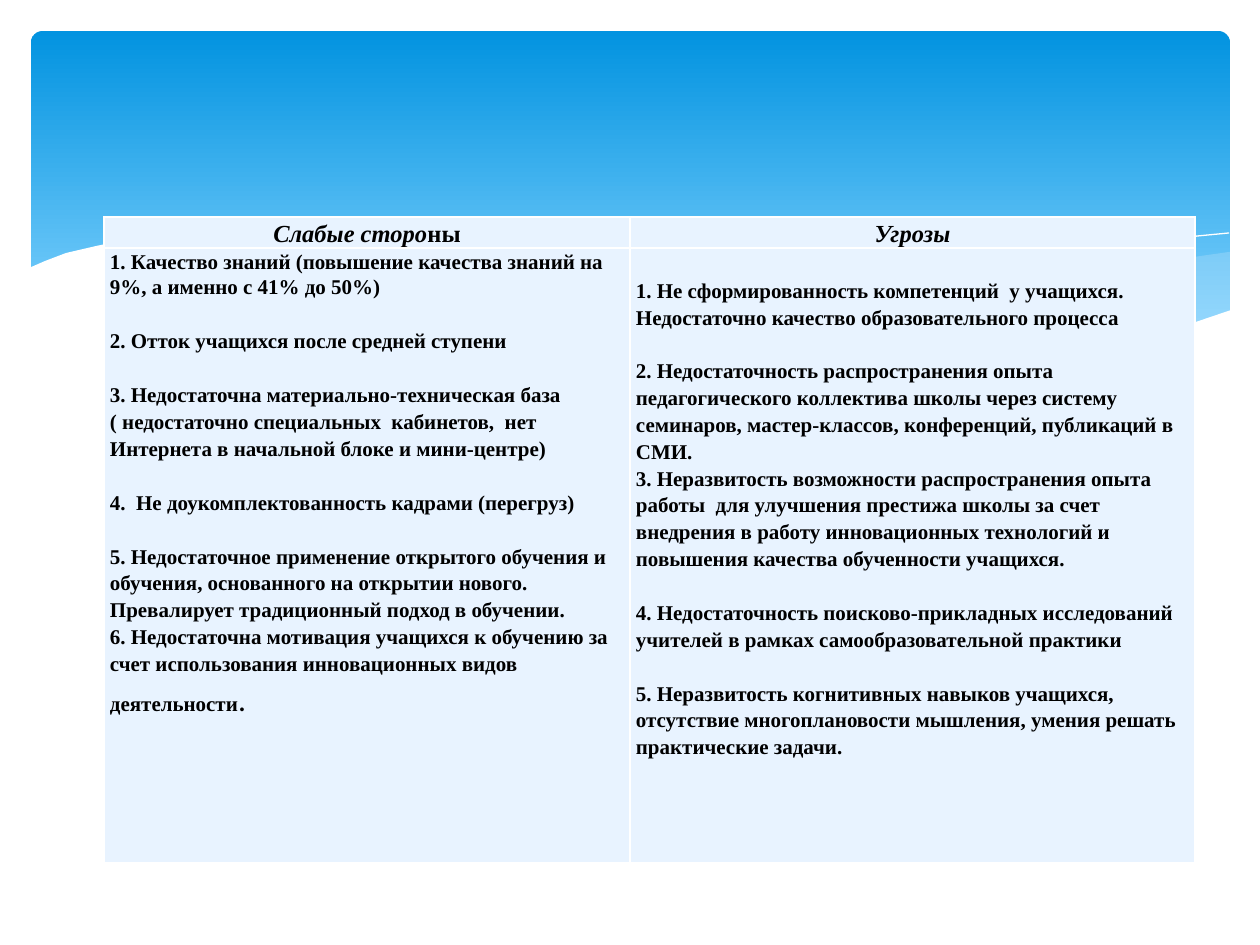
from lxml import etree
from pptx import Presentation
from pptx.dml.color import RGBColor
from pptx.enum.shapes import MSO_SHAPE
from pptx.enum.text import PP_ALIGN
from pptx.oxml import parse_xml
from pptx.oxml.ns import nsdecls, qn
from pptx.util import Emu, Pt

ROUND = MSO_SHAPE.ROUNDED_RECTANGLE
CENTER, LEFT = PP_ALIGN.CENTER, PP_ALIGN.LEFT
WHITE = RGBColor(0xFF, 0xFF, 0xFF)
BLACK = RGBColor(0, 0, 0)
BLUE = RGBColor(0x02, 0x93, 0xE0)
SKY = RGBColor(0x83, 0xD3, 0xFE)
MIST = RGBColor(0xC6, 0xE7, 0xFC)
PALE = RGBColor(0xE8, 0xF3, 0xFF)
SCALE = 914400 / 126
SERIF = "Times New Roman"


def px(num):
    return Emu(round(num * SCALE))


def style(item, form):
    for key, val in form.items():
        setattr(item, key, val)


deck = Presentation()
style(deck, {"slide_width": px(1260), "slide_height": px(945)})
slide = deck.slides.add_slide(deck.slide_layouts[6])
shapes = slide.shapes

band = shapes.add_shape(ROUND, px(31), px(31), px(1199), px(340))
band.adjustments[0] = 0.034
band.shadow.inherit = False
band.line.fill.background()
band.fill.gradient()
band.fill.gradient_angle = 270
for stop, tone, pos in zip(band.fill.gradient_stops, (BLUE, SKY), (0, 0.9)):
    style(stop, {"position": pos})
    stop.color.rgb = tone

waves = [
    (MIST, 29, [
        (1229, 252), (1194, 257), (1159, 265), (1123, 272), (1085, 281),
        (1014, 299), (949, 312), (890, 324), (833, 334), (871, 339),
        (922, 345), (969, 349), (1012, 350), (1052, 349), (1087, 347),
        (1120, 343), (1150, 338), (1178, 330), (1213, 318), (1230, 311),
        (1230, 252)]),
    (MIST, 40, [
        (1125, 344), (1091, 339), (1017, 328), (934, 311), (842, 291),
        (754, 270), (699, 258), (648, 249), (586, 241), (529, 236),
        (479, 233), (433, 234), (394, 237), (360, 241), (407, 247),
        (456, 256), (509, 266), (566, 280), (668, 302), (757, 321),
        (819, 333), (876, 340), (927, 347), (974, 349), (1017, 350),
        (1056, 350), (1092, 348)]),
    (None, 0, [
        (389, 246), (433, 239), (487, 236), (546, 236), (616, 239),
        (701, 248), (801, 262), (876, 276), (958, 294), (1047, 316),
        (1143, 343)]),
    (None, 0, [
        (772, 324), (823, 310), (876, 296), (942, 281), (1016, 265),
        (1091, 251), (1147, 242), (1198, 236), (1229, 233)]),
    (WHITE, 100, [
        (1231, 310), (1184, 326), (1133, 339), (1071, 347), (1019, 349),
        (959, 347), (892, 340), (816, 330), (730, 315), (634, 294),
        (563, 277), (493, 261), (428, 248), (368, 239), (315, 234),
        (266, 232), (223, 232), (184, 233), (150, 236), (120, 241),
        (96, 246), (66, 253), (45, 261), (29, 268), (29, 415), (1231, 415)]),
]
for tone, share, points in waves:
    pen = shapes.build_freeform(*points[0], scale=SCALE)
    pen.add_line_segments(points[1:], close=tone is not None)
    wave = pen.convert_to_shape()
    wave.shadow.inherit = False
    if tone is None:
        wave.fill.background()
        wave.line.color.rgb = WHITE
        wave.line.width = Pt(0)
        continue
    wave.line.fill.background()
    wave.fill.solid()
    wave.fill.fore_color.rgb = tone
    if share < 100:
        color = wave.fill._xPr.find(qn("a:solidFill"))[0]
        etree.SubElement(color, qn("a:alpha"), val=str(share * 1000))

HEAD = {"size": Pt(14), "name": SERIF, "bold": True, "italic": True}
PLAIN = {**HEAD, "italic": False}
BODY = {**PLAIN, "size": Pt(12)}
DOT = {"size": Pt(18), "name": "Calibri", "bold": False, "italic": False}
TITLE = {"alignment": CENTER, "line_spacing": 1.15}
FIRST = {"alignment": LEFT, "line_spacing": 1.1, "space_before": Pt(3)}
NEXT = {"alignment": LEFT, "line_spacing": 1.15}
APART = {**NEXT, "space_before": Pt(15.5)}

weak = [
    (FIRST, [("1. Качество знаний (повышение качества знаний на 9%, а именно с 41% до 50%)", BODY)]),
    (APART, [("2. Отток учащихся после средней ступени", BODY)]),
    (APART, [("3. Недостаточна материально-техническая база ( недостаточно специальных  кабинетов,  нет  Интернета в начальной блоке и мини-центре)", BODY)]),
    (APART, [("4.  Не доукомплектованность кадрами (перегруз)", BODY)]),
    (APART, [("5. Недостаточное применение открытого обучения и обучения, основанного на открытии нового. Превалирует традиционный подход в обучении.", BODY)]),
    (NEXT, [("6. Недостаточна мотивация учащихся к обучению за счет использования инновационных видов деятельности", BODY), (".", DOT)]),
]
threats = [
    (NEXT, [("1. Не сформированность компетенций  у учащихся. Недостаточно качество образовательного процесса", BODY)]),
    (APART, [("2. Недостаточность распространения опыта педагогического коллектива школы через систему семинаров, мастер-классов, конференций, публикаций в СМИ.", BODY)]),
    (NEXT, [("3. Неразвитость возможности распространения опыта  работы  для улучшения престижа школы за счет внедрения в работу инновационных технологий и повышения качества обученности учащихся.", BODY)]),
    (APART, [("4. Недостаточность поисково-прикладных исследований учителей в рамках самообразовательной практики", BODY)]),
    (APART, [("5. Неразвитость когнитивных навыков учащихся, отсутствие многоплановости мышления, умения решать практические задачи.", BODY)]),
]
cells = [
    (0, 0, 0, [(TITLE, [("Слабые сторо", HEAD), ("ны", PLAIN)])]),
    (0, 1, 0, [(TITLE, [("Угрозы", HEAD)])]),
    (1, 0, 0, weak),
    (1, 1, 28, threats),
]

table = shapes.add_table(2, 2, px(104), px(217), px(1091), px(646)).table
style(table, {"first_row": False, "horz_banding": False})
for col, wide in zip(table.columns, (526, 565)):
    col.width = px(wide)
for row, high in zip(table.rows, (31, 615)):
    row.height = px(high)

for row, col, top, paras in cells:
    cell = table.cell(row, col)
    style(cell, {"margin_left": px(6), "margin_right": px(6),
                 "margin_top": px(top), "margin_bottom": 0})
    cell.fill.solid()
    cell.fill.fore_color.rgb = PALE
    props = cell._tc.get_or_add_tcPr()
    for spot, side in enumerate(("lnL", "lnR", "lnT", "lnB")):
        props.insert(spot, parse_xml(
            f'<a:{side} {nsdecls("a")} w="12700"><a:solidFill>'
            f'<a:srgbClr val="{WHITE}"/></a:solidFill></a:{side}>'))
    frame = cell.text_frame
    for spot, (form, runs) in enumerate(paras):
        para = frame.add_paragraph() if spot else frame.paragraphs[0]
        style(para, form)
        for text, look in runs:
            run = para.add_run()
            run.text = text
            style(run.font, look)
            run.font.color.rgb = BLACK

deck.save("out.pptx")
